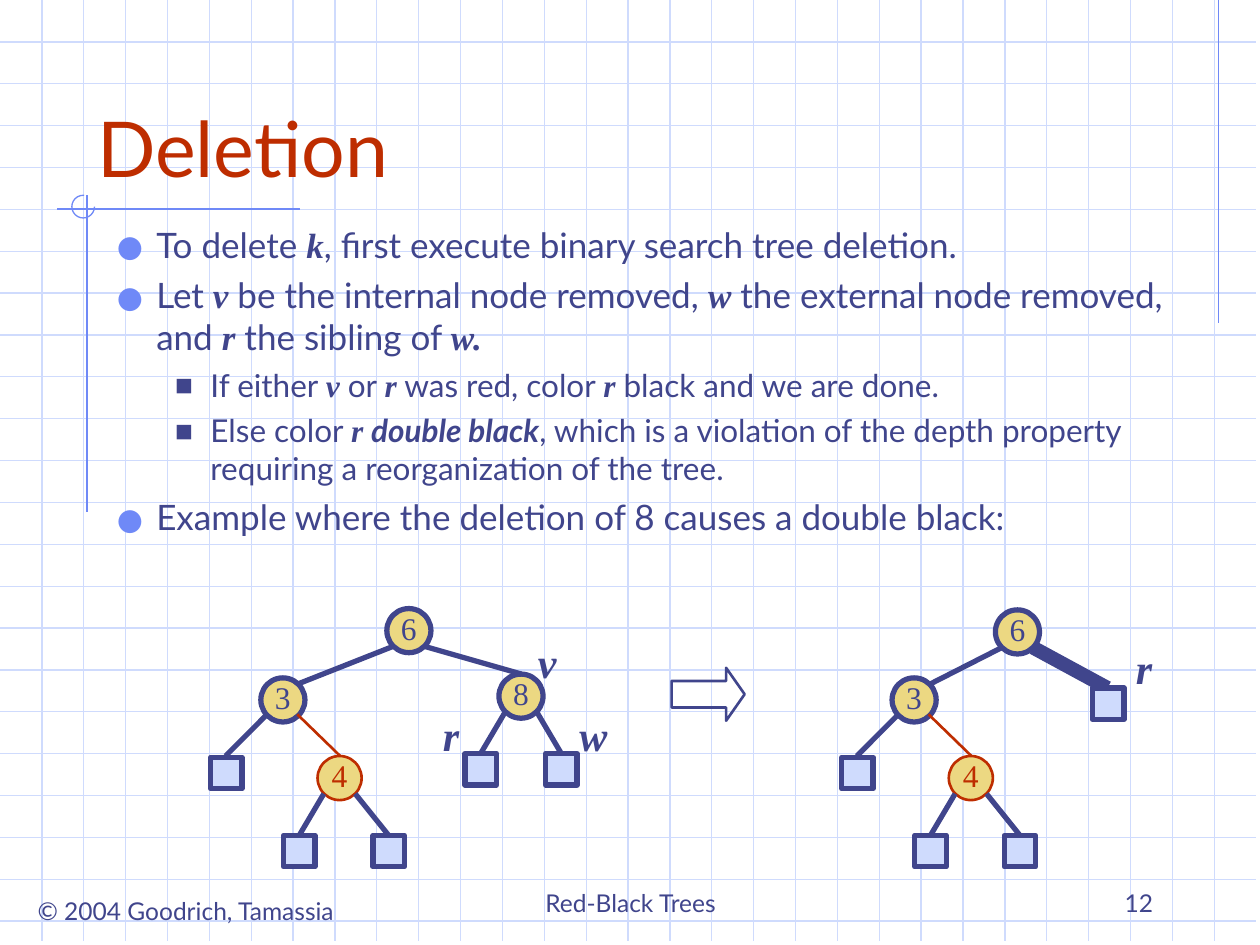
import dataclasses

import pptx
import pptx.dml.color
import pptx.enum.shapes
import pptx.enum.text
import pptx.oxml.ns
import pptx.util
from lxml import etree

Inches = pptx.util.Inches
Pt = pptx.util.Pt
Shape = pptx.enum.shapes.MSO_SHAPE
Anchor = pptx.enum.text.MSO_ANCHOR
Align = pptx.enum.text.PP_ALIGN


@dataclasses.dataclass(frozen=True)
class Theme:
    ink: str = "40458C"
    red: str = "BE2D00"
    blue: str = "6F89F7"
    pale: str = "CFDBFD"
    gold: str = "ECD882"
    sans: str = "Lato"
    serif: str = "Times New Roman"
    title: int = 44
    body: int = 20
    sub: int = 18
    mark: int = 24
    foot: int = 14
    thin: float = 0.75
    slim: float = 1.5
    bold: float = 3
    heavy: float = 8


THEME = Theme()
NODE, LEAF = 0.35, 0.25
SHIFT = 5.01  # from the left tree to the right one

MATH = {"k", "v", "w", "r", "w.", "r "}
STRONG = {"double black"}
# Each item: level, then its runs
ITEMS = [
    (0, ["To delete ", "k", ", first execute binary search tree deletion."]),
    (0, ["Let ", "v", " be the internal node removed, ", "w",
         " the external node removed, and ", "r", " the sibling of ", "w."]),
    (1, ["If either ", "v", " or ", "r", " was red, color ", "r",
         " black and we are done."]),
    (1, ["Else color ", "r ", "double black",
         ", which is a violation of the depth property requiring"
         " a reorganization of the tree."]),
    (0, ["Example where the deletion of 8 causes a double black:"]),
]
# Per level: size, indent, hang, space before, bullet, its colour and percent
LEVELS = [
    (THEME.body, 0.35, 0.35, 5, "•", THEME.blue, 176),
    (THEME.sub, 0.78, 0.28, 4.5, "■", THEME.ink, 60),
]


def rgb(code):
    return pptx.dml.color.RGBColor.from_string(code)


def style(font, size, code=THEME.ink, face=THEME.sans, strong=False):
    font.name, font.size = face, Pt(size)
    font.bold = font.italic = strong
    font.color.rgb = rgb(code)


def line(slide, start, end, code=THEME.ink, width=THEME.bold):
    link = slide.shapes.add_connector(
        pptx.enum.shapes.MSO_CONNECTOR.STRAIGHT,
        *(Inches(v) for v in (*start, *end)))
    link.line.color.rgb = rgb(code)
    link.line.width = Pt(width)
    etree.SubElement(link.element.spPr, pptx.oxml.ns.qn("a:effectLst"))


def form(slide, kind, box, fill=None, code=THEME.ink, width=THEME.bold):
    shape = slide.shapes.add_shape(kind, *(Inches(v) for v in box))
    shape.shadow.inherit = False
    if fill:
        shape.fill.solid()
        shape.fill.fore_color.rgb = rgb(fill)
    else:
        shape.fill.background()
    shape.line.color.rgb = rgb(code)
    shape.line.width = Pt(width)
    return shape


def node(slide, x, y, key, code=THEME.ink, width=THEME.bold):
    shape = form(slide, Shape.OVAL, (x, y, NODE, NODE), THEME.gold, code, width)
    frame = shape.text_frame
    frame.margin_left = frame.margin_right = frame.margin_top = 0
    frame.margin_bottom = Inches(0.05)
    frame.word_wrap = False
    frame.vertical_anchor = Anchor.MIDDLE
    frame.text = key
    para = frame.paragraphs[0]
    para.alignment = Align.CENTER
    style(para.runs[0].font, THEME.sub, code, THEME.serif)


def leaf(slide, x, y):
    form(slide, Shape.RECTANGLE, (x, y, LEAF, LEAF), THEME.pale)


def label(slide, text, box, align=Align.CENTER, anchor=Anchor.TOP,
          wrap=True, **look):
    frame = slide.shapes.add_textbox(*(Inches(v) for v in box)).text_frame
    frame.word_wrap = wrap
    frame.vertical_anchor = anchor
    frame.text = text
    para = frame.paragraphs[0]
    para.alignment = align
    style(para.runs[0].font, **look)


def mark(slide, text, x, y, width=0.34):
    label(slide, text, (x, y, width, 0.5), size=THEME.mark,
          face=THEME.serif, strong=True)


def bullet(para, sign, code, size):
    props = para._p.get_or_add_pPr()
    qn = pptx.oxml.ns.qn
    tint = etree.SubElement(props, qn("a:buClr"))
    etree.SubElement(tint, qn("a:srgbClr"), val=code)
    etree.SubElement(props, qn("a:buSzPct"), val=str(size * 1000))
    etree.SubElement(props, qn("a:buFont"), typeface=THEME.sans)
    etree.SubElement(props, qn("a:buChar"), char=sign)
    return props


def place(holder, box, anchor):
    holder.left, holder.top, holder.width, holder.height = map(Inches, box)
    holder.element.getparent().append(holder.element)  # in front of the grid
    frame = holder.text_frame
    frame.auto_size = pptx.enum.text.MSO_AUTO_SIZE.NONE
    frame.word_wrap = True
    frame.vertical_anchor = anchor
    return frame


def grid(slide):
    step = 0.3323
    for row in range(1, 23):
        line(slide, (0, row * step), (9.97, row * step), THEME.pale, THEME.thin)
    for col in range(1, 30):
        line(slide, (col * step, 0), (col * step, 7.47), THEME.pale, THEME.thin)


def trim(slide):
    for start, end in [((9.67, 0), (9.67, 2.56)), ((2.38, 1.66), (0.45, 1.66)),
                       ((0.69, 1.55), (0.69, 4.06))]:
        line(slide, start, end, THEME.blue, THEME.thin)
    arc = form(slide, Shape.ARC, (0.57, 1.55, 0.18, 0.18), None,
               THEME.blue, THEME.thin)
    arc.adjustments[0], arc.adjustments[1] = 0, 165  # 0 to 275 degrees


def title(slide):
    frame = place(slide.shapes.title, (0.67, 0.33, 8.5, 1.25), Anchor.BOTTOM)
    frame.text = "Deletion"
    para = frame.paragraphs[0]
    para.alignment = Align.LEFT
    style(para.runs[0].font, THEME.title, THEME.red)


def body(slide):
    frame = place(slide.placeholders[1], (0.79, 1.72, 8.75, 3.11), Anchor.TOP)
    for pos, (level, parts) in enumerate(ITEMS):
        size, indent, hang, gap, sign, code, ratio = LEVELS[level]
        para = frame.add_paragraph() if pos else frame.paragraphs[0]
        props = bullet(para, sign, code, ratio)
        props.set("marL", str(Inches(indent)))
        props.set("indent", str(-Inches(hang)))
        para.level = level
        para.space_before = Pt(gap if pos else 0)
        for part in parts:
            run = para.add_run()
            run.text = part
            style(run.font, size, face=THEME.serif if part in MATH else THEME.sans,
                  strong=part in MATH | STRONG)


def branch(slide, x):
    """Subtree of 3, with its red child 4."""
    node(slide, x + 2.07, 5.38, "3")
    leaf(slide, x + 1.67, 6.01)
    line(slide, (x + 1.79, 6), (x + 2.12, 5.67))
    node(slide, x + 2.52, 6, "4", THEME.red, THEME.slim)
    for side, top in [(2.25, 2.57), (2.96, 2.82)]:
        leaf(slide, x + side, 6.63)
        line(slide, (x + side + LEAF / 2, 6.63), (x + top, 6.3))
    line(slide, (x + 2.7, 6), (x + 2.36, 5.67), THEME.red, THEME.slim)


def before(slide):
    node(slide, 3.07, 4.83, "6")
    line(slide, (4.14, 5.35), (3.37, 5.13))
    line(slide, (2.36, 5.43), (3.12, 5.13))
    branch(slide, 0)
    node(slide, 3.96, 5.35, "8")
    for side, top in [(3.69, 4.01), (4.33, 4.26)]:
        leaf(slide, side, 5.98)
        line(slide, (side + LEAF / 2, 5.98), (top, 5.65))
    mark(slide, "v", 4.17, 5)
    mark(slide, "r", 3.41, 5.58)
    mark(slide, "w", 4.5, 5.58, 0.42)


def after(slide):
    line(slide, (8.79, 5.46), (8.2, 5.14), width=THEME.heavy)
    node(slide, 7.9, 4.84, "6")
    line(slide, (7.38, 5.43), (7.95, 5.14))
    branch(slide, SHIFT)
    leaf(slide, 8.67, 5.46)
    mark(slide, "r", 8.83, 5.05, 0.5)


def footer(slide):
    label(slide, "© 2004 Goodrich, Tamassia", (0.18, 7.06, 2.59, 0.34),
          wrap=False, size=THEME.foot)
    label(slide, "Red-Black Trees", (3.42, 6.83, 3.17, 0.5),
          anchor=Anchor.BOTTOM, size=THEME.foot)
    label(slide, "12", (7.17, 6.83, 2.08, 0.5), Align.RIGHT, Anchor.BOTTOM,
          size=THEME.foot)


def main():
    deck = pptx.Presentation()
    deck.slide_width, deck.slide_height = Inches(10), Inches(7.5)
    slide = deck.slides.add_slide(deck.slide_layouts[1])
    # Backdrop
    grid(slide)
    trim(slide)
    # Text
    title(slide)
    body(slide)
    footer(slide)
    # Trees, with the arrow between them
    before(slide)
    arrow = form(slide, Shape.RIGHT_ARROW, (5.33, 5.3, 0.58, 0.42),
                 width=THEME.slim)
    arrow.adjustments[0], arrow.adjustments[1] = 0.5, 0.35
    after(slide)
    deck.save("out.pptx")


if __name__ == "__main__":
    main()
